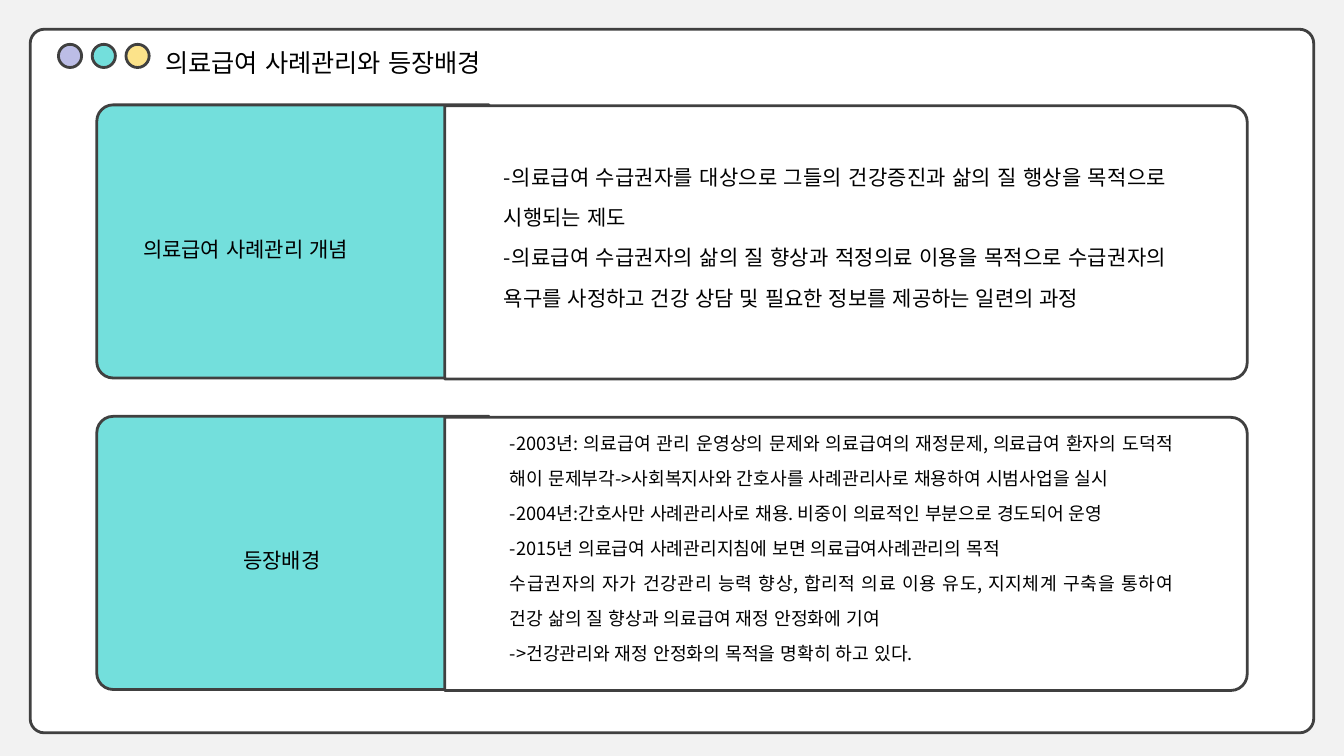
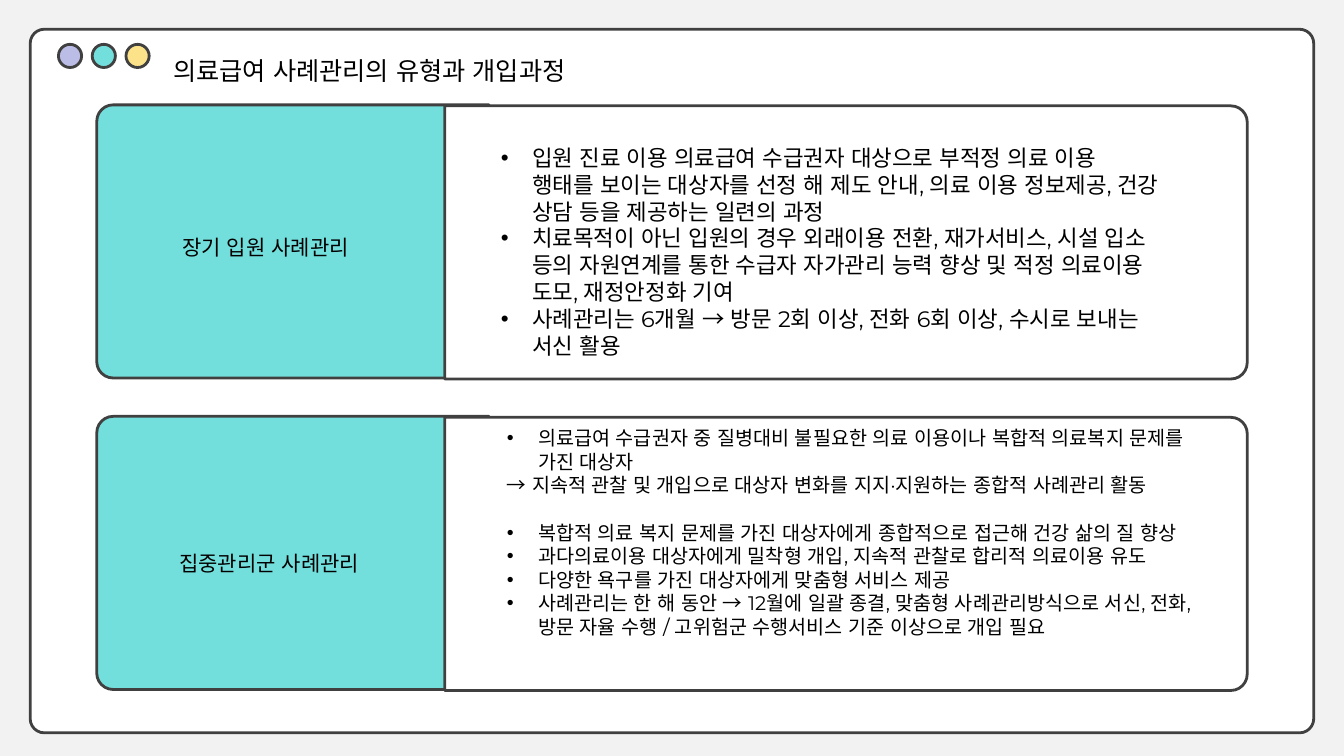
from lxml import etree
from pptx import Presentation
from pptx.dml.color import RGBColor
from pptx.enum.lang import MSO_LANGUAGE_ID as Lang
from pptx.enum.shapes import MSO_SHAPE as Shape
from pptx.enum.text import PP_ALIGN as Align
from pptx.oxml.ns import qn
from pptx.util import Inches, Pt

BACKDROP = RGBColor(0xF2, 0xF2, 0xF2)
INK = RGBColor(0x40, 0x40, 0x40)
TEXT = RGBColor(0, 0, 0)
WHITE = RGBColor(0xFF, 0xFF, 0xFF)
LILAC = RGBColor(0xBC, 0xBD, 0xE6)
TEAL = RGBColor(0x73, 0xDF, 0xDC)
YELLOW = RGBColor(0xFC, 0xE3, 0x8A)

NOTO, MONTSERRAT, CALIBRI = "Noto Sans CJK KR", "Montserrat", "Calibri"
SLIDE_W, SLIDE_H = 13.33, 7.5
ROW_TOPS = [1.04, 4.13]
ROW_H = 2.71
LABEL_X, LABEL_W = 0.96, 3.89
BODY_X, BODY_W = 4.41, 7.96
DOT, DOT_STEP = 0.23, 0.335
INDENT = Inches(0.31)
BULLET = "• "

# Each text: left, top, width, height, font, size, alignment, line spacing, paragraphs
SLIDES = [
    [
        (1.54, 0.42, 9.81, 0.4, CALIBRI, 18, Align.LEFT, 1, ["의료급여 사례관리와 등장배경"]),
        (1.32, 2.17, 2.79, 0.47, MONTSERRAT, 15, Align.LEFT, 1.5, ["의료급여 사례관리 개념"]),
        (4.9, 1.43, 6.77, 2.49, NOTO, 15, Align.JUSTIFY, 1.6, [
            "-의료급여 수급권자를 대상으로 그들의 건강증진과 삶의 질 행상을 목적으로 시행되는 제도",
            "-의료급여 수급권자의 삶의 질 향상과 적정의료 이용을 목적으로 수급권자의 욕구를 "
            "사정하고 건강 상담 및 필요한 정보를 제공하는 일련의 과정",
        ]),
        (1.4, 5.26, 2.79, 0.47, MONTSERRAT, 15, Align.CENTER, 1.5, ["등장배경"]),
        (4.96, 4.11, 6.77, 3.99, NOTO, 13, Align.JUSTIFY, 1.6, [
            "-2003년: 의료급여 관리 운영상의 문제와 의료급여의 재정문제, 의료급여 환자의 도덕적 "
            "해이 문제부각->사회복지사와 간호사를 사례관리사로 채용하여 시범사업을 실시",
            "-2004년:간호사만 사례관리사로 채용. 비중이 의료적인 부분으로 경도되어 운영",
            "-2015년 의료급여 사례관리지침에 보면 의료급여사례관리의 목적",
            "수급권자의 자가 건강관리 능력 향상, 합리적 의료 이용 유도, 지지체계 구축을 통하여 "
            "건강 삶의 질 향상과 의료급여 재정 안정화에 기여",
            "->건강관리와 재정 안정화의 목적을 명확히 하고 있다.",
        ]),
    ],
    [
        (1.62, 0.32, 10.73, 1.05, NOTO, 18, Align.JUSTIFY, 1.6, ["의료급여 사례관리의 유형과 개입과정"]),
        (1.15, 2.13, 2.97, 0.9, NOTO, 15, Align.CENTER, 1.6, ["장기 입원 사례관리"]),
        (4.87, 1.38, 6.77, 2.23, MONTSERRAT, 16, Align.LEFT, 1, [
            "• 입원 진료 이용 의료급여 수급권자 대상으로 부적정 의료 이용 행태를 보이는 대상자를 "
            "선정 해 제도 안내, 의료 이용 정보제공, 건강 상담 등을 제공하는 일련의 과정",
            "• 치료목적이 아닌 입원의 경우 외래이용 전환, 재가서비스, 시설 입소 등의 자원연계를 "
            "통한 수급자 자가관리 능력 향상 및 적정 의료이용 도모, 재정안정화 기여",
            "• 사례관리는 6개월 → 방문 2회 이상, 전화 6회 이상, 수시로 보내는 서신 활용",
        ]),
        (1.15, 5.26, 3.04, 1.3, NOTO, 15, Align.CENTER, 1.6, ["집중관리군 사례관리"]),
        (4.93, 4.18, 7.24, 3.2, MONTSERRAT, 14, Align.LEFT, 1, [
            "• 의료급여 수급권자 중 질병대비 불필요한 의료 이용이나 복합적 의료복지 문제를 가진 대상자",
            "→ 지속적 관찰 및 개입으로 대상자 변화를 지지·지원하는 종합적 사례관리 활동",
            "• 복합적 의료 복지 문제를 가진 대상자에게 종합적으로 접근해 건강 삶의 질 향상",
            "• 과다의료이용 대상자에게 밀착형 개입, 지속적 관찰로 합리적 의료이용 유도",
            "• 다양한 욕구를 가진 대상자에게 맞춤형 서비스 제공",
            "• 사례관리는 한 해 동안 → 12월에 일괄 종결, 맞춤형 사례관리방식으로 서신, 전화, "
            "방문 자율 수행 / 고위험군 수행서비스 기준 이상으로 개입 필요",
        ]),
    ],
]


def add_outlined(slide, kind, left, top, width, height, fill, turn=0):
    """Place a filled, outlined shape; the box given is the one seen after a quarter turn."""
    if turn:
        left, top = left + (width - height) / 2, top + (height - width) / 2
        width, height = height, width
    shape = slide.shapes.add_shape(kind, *map(Inches, (left, top, width, height)))
    shape.rotation = turn
    shape.shadow.inherit = False
    shape.fill.solid()
    shape.fill.fore_color.rgb = fill
    shape.line.color.rgb = INK
    shape.line.width = Pt(2)
    return shape


def add_text(slide, left, top, width, height, face, size, align, spacing, lines):
    frame = slide.shapes.add_textbox(*map(Inches, (left, top, width, height))).text_frame
    frame.word_wrap = True
    after_plain = False
    for number, line in enumerate(lines):
        paragraph = frame.add_paragraph() if number else frame.paragraphs[0]
        paragraph.alignment = align
        paragraph.line_spacing = spacing
        bulleted = line.startswith(BULLET)
        if bulleted:
            if after_plain:
                paragraph.space_before = Pt(17)
            props = paragraph._p.get_or_add_pPr()
            props.set("marL", str(INDENT))
            props.set("indent", str(-INDENT))
            etree.SubElement(props, qn("a:buFont"), typeface="Arial")
            etree.SubElement(props, qn("a:buChar"), char=BULLET.strip())
        after_plain = not bulleted
        paragraph.text = line.removeprefix(BULLET)
        paragraph.font.name = face
        paragraph.font.size = Pt(size)
        paragraph.font.color.rgb = TEXT
        paragraph.font.language_id = Lang.KOREAN


prs = Presentation()
prs.slide_width, prs.slide_height = Inches(SLIDE_W), Inches(SLIDE_H)
for texts in SLIDES:
    slide = prs.slides.add_slide(prs.slide_layouts[6])
    slide.background.fill.solid()
    slide.background.fill.fore_color.rgb = BACKDROP

    window = add_outlined(slide, Shape.ROUNDED_RECTANGLE, 0.3, 0.29, 12.73, 6.98, WHITE)
    window.adjustments[0] = 0.02
    for column, colour in enumerate([LILAC, TEAL, YELLOW]):
        add_outlined(slide, Shape.OVAL, 0.58 + column * DOT_STEP, 0.44, DOT, DOT, colour)

    for top in ROW_TOPS:
        for left, width, drop, fill, turn in [
            (LABEL_X, LABEL_W, 0, TEAL, 270),
            (BODY_X, BODY_W, 0.01, WHITE, 90),
        ]:
            panel = add_outlined(slide, Shape.ROUND_2_SAME_RECTANGLE,
                                 left, top + drop, width, ROW_H, fill, turn)
            panel.adjustments[0] = 0.06

    for text in texts:
        add_text(slide, *text)

prs.save("out.pptx")
